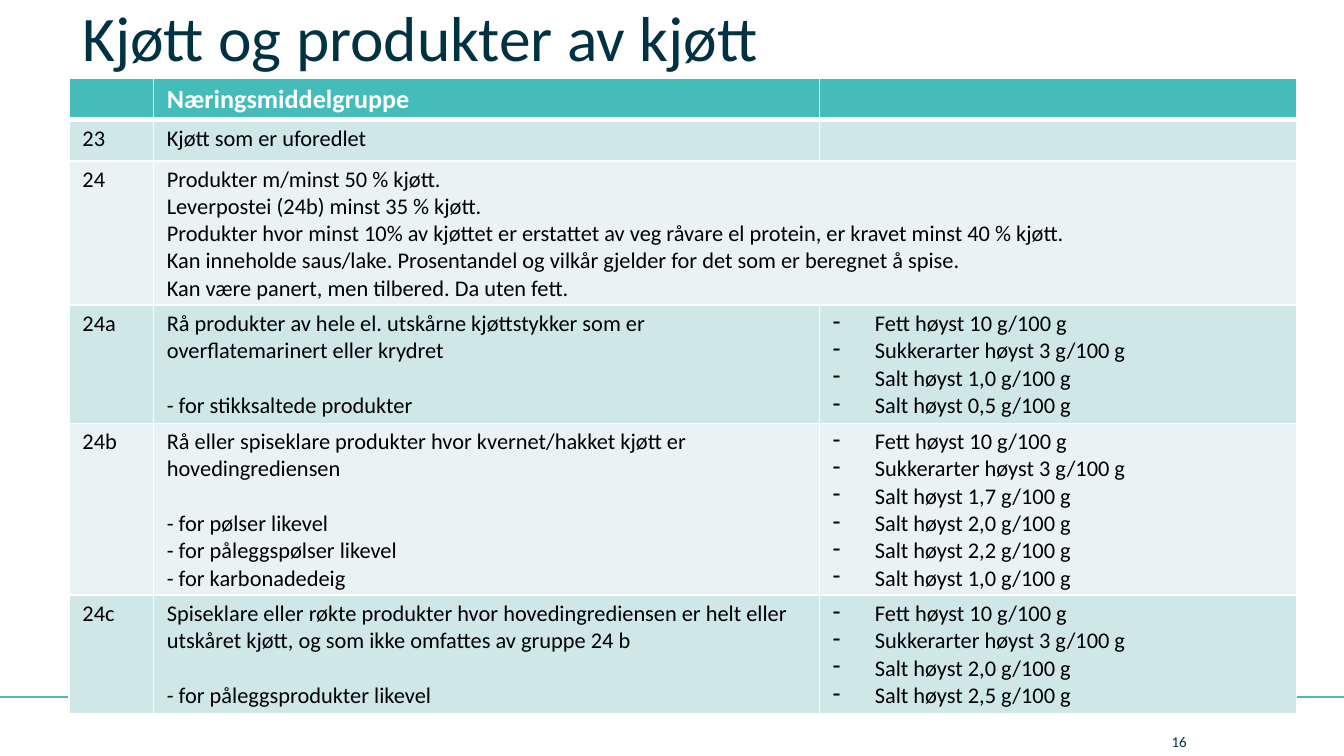
import pptx
import pptx.dml.color
import pptx.enum.shapes
import pptx.enum.text
import pptx.oxml
import pptx.oxml.ns
import pptx.util
from lxml import etree

Pt = pptx.util.Pt
qn = pptx.oxml.ns.qn
ANCHOR = pptx.enum.text.MSO_ANCHOR

FONT = "Calibri"
NAVY, TEAL, WHITE, BLACK = "003244", "43BCBA", "FFFFFF", "000000"
BANDS = ["CFE7E7", "E9F3F3"]
BODY_SIZE, HEADER_SIZE = 12, 14
BODY_LINE = 14.65
BULLET_INDENT = 22.5

COLUMN_WIDTHS = [45.2, 356.8, 255.6]
ROW_HEIGHTS = [21.9, 21.9, 77, 49.7, 77, 63.4]


def limits(*salt):
    return ["Fett høyst 10 g/100 g", "Sukkerarter høyst 3 g/100 g"] + [
        f"Salt høyst {amount} g/100 g" for amount in salt]


# Each row: group number, description, exceptions, limits
FOOD_GROUPS = [
    ("23", ["Kjøtt som er uforedlet"], [], []),
    ("24", ["Produkter m/minst 50 % kjøtt.",
            "Leverpostei (24b) minst 35 % kjøtt.",
            "Produkter hvor minst 10% av kjøttet er erstattet av veg råvare el protein, "
            "er kravet minst 40 % kjøtt.",
            "Kan inneholde saus/lake. Prosentandel og vilkår gjelder for det som er "
            "beregnet å spise.",
            "Kan være panert, men tilbered. Da uten fett."], [], []),
    ("24a", ["Rå produkter av hele el. utskårne kjøttstykker som er overflatemarinert "
             "eller krydret"],
     ["- for stikksaltede produkter"], limits("1,0", "0,5")),
    ("24b", ["Rå eller spiseklare produkter hvor kvernet/hakket kjøtt er hovedingrediensen"],
     ["- for pølser likevel", "- for påleggspølser likevel", "- for karbonadedeig"],
     limits("1,7", "2,0", "2,2", "1,0")),
    ("24c", ["Spiseklare eller røkte produkter hvor hovedingrediensen er helt eller "
             "utskåret kjøtt, og som ikke omfattes av gruppe 24 b"],
     ["- for påleggsprodukter likevel"], limits("2,0", "2,5")),
]
MERGED_GROUP = "24"


def rgb(color):
    return pptx.dml.color.RGBColor.from_string(color)


def add_run(paragraph, text, size, color, bold=False):
    run = paragraph.add_run()
    run.text = text
    run.font.name = FONT
    run.font.size = Pt(size)
    run.font.bold = bold
    run.font.color.rgb = rgb(color)


def add_label(slide, text, left, top, width, height, size, anchor, inset):
    frame = slide.shapes.add_textbox(Pt(left), Pt(top), Pt(width), Pt(height)).text_frame
    frame.word_wrap = True
    frame.vertical_anchor = anchor
    frame.margin_top = frame.margin_bottom = Pt(inset)
    add_run(frame.paragraphs[0], text, size, NAVY)


def add_footer_line(slide, y):
    line = slide.shapes.add_connector(
        pptx.enum.shapes.MSO_CONNECTOR.STRAIGHT, Pt(0), Pt(y), Pt(720), Pt(y))
    line.line.color.rgb = rgb(TEAL)
    line.line.width = Pt(1)
    etree.SubElement(line._element.spPr, qn("a:effectLst"))


def style_cell(cell, fill, top=1, bottom=1):
    cell.margin_left = cell.margin_right = Pt(7.2)
    cell.margin_top = cell.margin_bottom = Pt(2.7)
    properties = cell._tc.get_or_add_tcPr()
    # Borders come before the fill
    for side, width in (("L", 1), ("R", 1), ("T", top), ("B", bottom)):
        border = etree.SubElement(properties, qn(f"a:ln{side}"), w=str(Pt(width)))
        solid = etree.SubElement(border, qn("a:solidFill"))
        etree.SubElement(solid, qn("a:srgbClr"), val=WHITE)
    cell.fill.solid()
    cell.fill.fore_color.rgb = rgb(fill)


def add_bullet(paragraph):
    properties = paragraph._p.get_or_add_pPr()
    properties.set("marL", str(Pt(BULLET_INDENT)))
    properties.set("indent", str(-Pt(BULLET_INDENT)))
    etree.SubElement(properties, qn("a:buChar"), char="-")


def write_cell(cell, lines, size=BODY_SIZE, color=BLACK, bold=False, bullets=False,
               gap_before=None):
    frame = cell.text_frame
    if not lines:
        # Keeps an empty cell from stretching its row
        etree.SubElement(frame.paragraphs[0]._p, qn("a:endParaRPr"), sz=str(size * 100))
    for index, text in enumerate(lines):
        paragraph = frame.add_paragraph() if index else frame.paragraphs[0]
        if bullets:
            add_bullet(paragraph)
        if index == gap_before:
            paragraph.space_before = Pt(BODY_LINE)
        add_run(paragraph, text, size, color, bold)


def add_food_table(slide):
    table = slide.shapes.add_table(
        len(ROW_HEIGHTS), len(COLUMN_WIDTHS), Pt(37), Pt(42),
        Pt(sum(COLUMN_WIDTHS)), Pt(sum(ROW_HEIGHTS))).table
    for column, width in zip(table.columns, COLUMN_WIDTHS):
        column.width = Pt(width)
    for row, height in zip(table.rows, ROW_HEIGHTS):
        row.height = Pt(height)

    # Header row
    for cell, lines in zip(table.rows[0].cells, ([], ["Næringsmiddelgruppe"], [])):
        style_cell(cell, TEAL, bottom=3)
        write_cell(cell, lines, HEADER_SIZE, WHITE, bold=True)

    # Food groups in alternating bands
    for index, (number, description, exceptions, group_limits) in enumerate(FOOD_GROUPS):
        number_cell, food_cell, limit_cell = table.rows[index + 1].cells
        for cell in (number_cell, food_cell, limit_cell):
            style_cell(cell, BANDS[index % 2], top=1 if index else 3)
        write_cell(number_cell, [number])
        write_cell(food_cell, description + exceptions, gap_before=len(description))
        write_cell(limit_cell, group_limits, bullets=True)
        if number == MERGED_GROUP:
            food_cell.merge(limit_cell)


def main():
    deck = pptx.Presentation()
    deck.slide_width, deck.slide_height = Pt(720), Pt(405)
    slide = deck.slides.add_slide(deck.slide_layouts[6])

    add_footer_line(slide, 373.5)
    add_label(slide, "Kjøtt og produkter av kjøtt", 37, -5.8, 646.6, 49, 34,
              ANCHOR.BOTTOM, 3.6)
    add_label(slide, "16", 620.6, 393, 51, 9, 8, ANCHOR.MIDDLE, 0)
    add_food_table(slide)

    deck.save("out.pptx")


if __name__ == "__main__":
    main()
